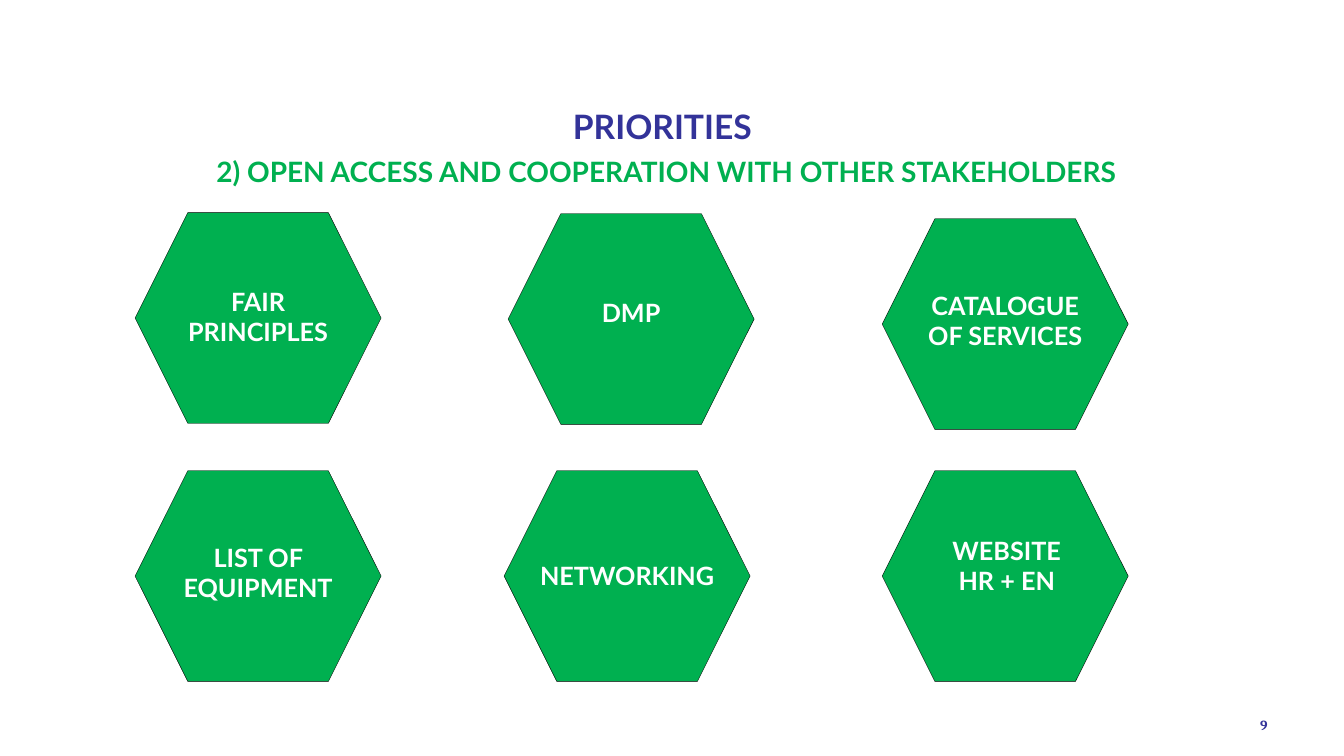
from pptx import Presentation
from pptx import util as u
from pptx.dml.color import RGBColor
from pptx.enum import shapes, text

PX = 9144
COLORS = {"navy": "333399", "green": "00B050", "white": "FFFFFF", "black": "000000"}
HEX_W, HEX_H = 244, 209
PRIORITIES = [
    ((134, 211), (161, 279, 190, 71), ["FAIR", "PRINCIPLES"]),
    ((504, 212), (531, 290, 190, 40), ["DMP"]),
    ((875, 217), (902, 283, 190, 71), ["CATALOGUE OF SERVICES"]),
    ((134, 467), (161, 533, 190, 71), ["LIST OF EQUIPMENT"]),
    ((500, 467), (500, 551, 244, 40), ["NETWORKING"]),
    ((875, 467), (875, 526, 247, 71), ["WEBSITE", "HR + EN"]),
]


def px(*lengths):
    """Turn px lengths into EMU."""
    return [u.Emu(n * PX) for n in lengths]


def rgb(name):
    """Look up a named colour."""
    return RGBColor.from_string(COLORS[name])


def write(p, line, size=18, color="white", font="Lato", align="CENTER", after=0):
    """Write one formatted bold line into a paragraph."""
    p.alignment = getattr(text.PP_ALIGN, align)
    p.space_after = u.Pt(after)
    r = p.add_run()
    r.text = line
    r.font.name, r.font.size, r.font.bold = font, u.Pt(size), True
    r.font.color.rgb = rgb(color)


def add_title(s, box, lines):
    """Fill the title placeholder with (text, size, colour) lines."""
    sp = s.shapes.title
    sp.left, sp.top, sp.width, sp.height = px(*box)
    tf = sp.text_frame
    tf.word_wrap = True
    tf.auto_size = text.MSO_AUTO_SIZE.NONE
    tf.vertical_anchor = text.MSO_ANCHOR.TOP
    for i, (line, size, color) in enumerate(lines):
        p = tf.add_paragraph() if i else tf.paragraphs[0]
        write(p, line, size=size, color=color, after=6)


def add_hexagon(s, left, top):
    """Draw a green hexagon with a thin outline."""
    sp = s.shapes.add_shape(shapes.MSO_SHAPE.HEXAGON, *px(left, top, HEX_W, HEX_H))
    sp.shadow.inherit = False
    sp.fill.solid()
    sp.fill.fore_color.rgb = rgb("green")
    sp.line.color.rgb = rgb("black")
    sp.line.width = u.Pt(0.25)


def add_label(s, box, lines, **fmt):
    """Add a wrapping text box with one paragraph per line."""
    tf = s.shapes.add_textbox(*px(*box)).text_frame
    tf.word_wrap = True
    for i, line in enumerate(lines):
        write(tf.add_paragraph() if i else tf.paragraphs[0], line, **fmt)


def main():
    """Build the slide and save it."""
    prs = Presentation()
    prs.slide_width, prs.slide_height = px(1333, 750)
    s = prs.slides.add_slide(prs.slide_layouts[5])
    add_label(s, (1174, 706, 93, 29), ["9"], size=10, color="navy", font="Cambria", align="RIGHT")
    add_title(s, (5, 100, 1312, 93), [
        ("PRIORITIES ", 24, "navy"),
        ("2) OPEN ACCESS AND COOPERATION WITH OTHER STAKEHOLDERS", 20, "green"),
    ])
    for corner, box, lines in PRIORITIES:
        add_hexagon(s, *corner)
        add_label(s, box, lines)
    prs.save("out.pptx")


if __name__ == "__main__":
    main()
